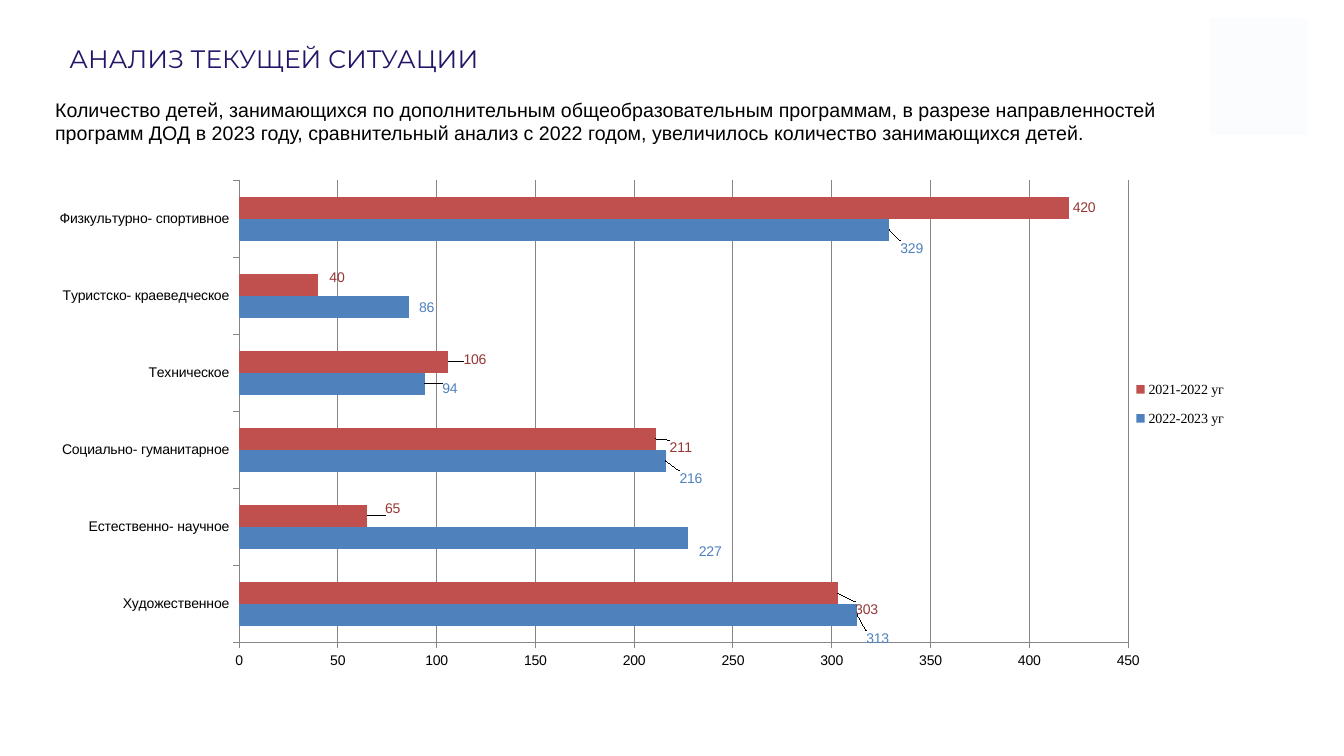
from lxml import etree
from pptx import Presentation
from pptx.chart.data import CategoryChartData
from pptx.dml.color import RGBColor
from pptx.enum.chart import XL_CHART_TYPE as ChartType
from pptx.enum.chart import XL_LABEL_POSITION as LabelPos
from pptx.enum.chart import XL_LEGEND_POSITION as LegendPos
from pptx.enum.chart import XL_TICK_MARK as TickMark
from pptx.enum.shapes import MSO_SHAPE as Shape
from pptx.enum.text import MSO_ANCHOR as Anchor
from pptx.enum.text import MSO_AUTO_SIZE as AutoSize
from pptx.enum.text import PP_ALIGN as Align
from pptx.oxml.ns import qn
from pptx.util import Cm, Pt

COLORS = {
    "title": "221668",
    "text": "000000",
    "plate": "FBFCFE",
    "plate_line": "FBFCFF",
    "grid": "868686",
    "current": "4F81BD",
    "previous": "C0504D",
    "previous_label": "953735",
}

DIRECTIONS = [
    "Художественное",
    "Естественно- научное",
    "Социально- гуманитарное",
    "Техническое",
    "Туристско- краеведческое",
    "Физкультурно- спортивное",
]

# Label shifts are (x, y) in percent of the chart's width and height.
YEARS = [
    {
        "name": "2022-2023 уг",
        "children": [313, 227, 216, 94, 86, 329],
        "fill": "current",
        "label": "current",
        "shifts": [(0.4, 4.7), (0.6, 2.8), (0.8, 3.5), (1.1, 1), (0.5, 0.2), (0.6, 3.7)],
    },
    {
        "name": "2021-2022 уг",
        "children": [303, 65, 211, 106, 40, 420],
        "fill": "previous",
        "label": "previous_label",
        "shifts": [(1.1, 3.3), (1.1, -1.4), (0.8, 1.8), (0.9, -0.4), (0.6, -1.4)],
    },
]


def color(name):
    return RGBColor.from_string(COLORS[name])


def set_layout(parent, index, **settings):
    """Give a chart part a manual layout, as its child number index."""
    for old in parent.findall(qn("c:layout")):
        parent.remove(old)
    layout = etree.Element(qn("c:layout"))
    manual = etree.SubElement(layout, qn("c:manualLayout"))
    for tag, value in settings.items():
        etree.SubElement(manual, qn(f"c:{tag}")).set("val", str(value))
    parent.insert(index, layout)


class SlideBuilder:
    font = "Arial"
    title_font = "Montserrat"
    legend_font = "Times New Roman"

    def __init__(self, deck):
        self.slide = deck.slides.add_slide(deck.slide_layouts[5])

    def style(self, font, name, size, color_name):
        font.name, font.size = name, Pt(size)
        font.color.rgb = color(color_name)

    def title(self, text, left, top, width, height):
        heading = self.slide.shapes.title
        heading.left, heading.top = Cm(left), Cm(top)
        heading.width, heading.height = Cm(width), Cm(height)
        frame = heading.text_frame
        frame.auto_size = AutoSize.NONE
        frame.vertical_anchor = Anchor.MIDDLE
        frame.margin_left = frame.margin_right = Cm(0.33)
        frame.margin_top = frame.margin_bottom = Cm(0.18)
        paragraph = frame.paragraphs[0]
        paragraph.alignment = Align.LEFT
        run = paragraph.add_run()
        run.text = text
        self.style(run.font, self.title_font, 18, "title")

    def plate(self, left, top, width, height):
        plate = self.slide.shapes.add_shape(
            Shape.RECTANGLE, Cm(left), Cm(top), Cm(width), Cm(height))
        plate.shadow.inherit = False
        plate.fill.solid()
        plate.fill.fore_color.rgb = color("plate")
        plate.line.color.rgb = color("plate_line")
        plate.line.width = Pt(2)

    def text(self, text, left, top, width, height):
        box = self.slide.shapes.add_textbox(Cm(left), Cm(top), Cm(width), Cm(height))
        frame = box.text_frame
        frame.word_wrap = True
        frame.auto_size = AutoSize.SHAPE_TO_FIT_TEXT
        run = frame.paragraphs[0].add_run()
        run.text = text
        self.style(run.font, self.font, 14, "text")

    def bar_chart(self, categories, years, left, top, width, height):
        data = CategoryChartData()
        data.categories = categories
        for year in years:
            data.add_series(year["name"], year["children"])
        chart = self.slide.shapes.add_chart(
            ChartType.BAR_CLUSTERED, Cm(left), Cm(top), Cm(width), Cm(height), data).chart
        chart.has_title = False
        self.style(chart.font, self.font, 10, "text")

        plot = chart.plots[0]
        plot.vary_by_categories = False
        plot.gap_width, plot.overlap = 150, 0
        for series, year in zip(plot.series, years):
            self.series(series, year)
        self.axes(chart)
        set_layout(chart.element.find(f".//{qn('c:plotArea')}"), 0,
                   layoutTarget="inner", xMode="edge", yMode="edge",
                   x=0.165, y=0.02, w=0.72, h=0.91)
        self.legend(chart)

    def series(self, series, year):
        series.format.fill.solid()
        series.format.fill.fore_color.rgb = color(year["fill"])
        labels = series.data_labels
        labels.show_value = True
        labels.position = LabelPos.OUTSIDE_END
        self.style(labels.font, self.font, 10, year["label"])
        for index, (right, down) in enumerate(year["shifts"]):
            label = series.points[index].data_label
            self.style(label.font, self.font, 10, year["label"])
            label.position = LabelPos.OUTSIDE_END
        for element, (right, down) in zip(labels._element.findall(qn("c:dLbl")), year["shifts"]):
            set_layout(element, 1, x=right / 100, y=down / 100)

    def axes(self, chart):
        for axis in (chart.category_axis, chart.value_axis):
            axis.major_tick_mark = TickMark.OUTSIDE
            axis.minor_tick_mark = TickMark.NONE
            axis.format.line.color.rgb = color("grid")
        values = chart.value_axis
        values.minimum_scale, values.maximum_scale = 0, 450
        values.major_unit = 50
        values.has_major_gridlines = True
        values.major_gridlines.format.line.color.rgb = color("grid")

    def legend(self, chart):
        chart.has_legend = True
        legend = chart.legend
        legend.position = LegendPos.RIGHT
        legend.include_in_layout = False
        self.style(legend.font, self.legend_font, 10, "text")
        set_layout(legend._element, 1, xMode="edge", yMode="edge",
                   x=0.877, y=0.39, w=0.1, h=0.14)


def main():
    deck = Presentation()
    deck.slide_width, deck.slide_height = Cm(33.87), Cm(19.05)
    builder = SlideBuilder(deck)
    builder.title("АНАЛИЗ ТЕКУЩЕЙ СИТУАЦИИ", 1.42, 0.71, 25.17, 1.5)
    builder.plate(30.53, 0.48, 2.39, 2.9)
    builder.text(
        "Количество детей, занимающихся по дополнительным общеобразовательным "
        "программам, в разрезе направленностей программ ДОД в 2023 году, "
        "сравнительный анализ с 2022 годом, увеличилось количество "
        "занимающихся детей.", 1.14, 2.34, 30.58, 1.45)
    builder.bar_chart(DIRECTIONS, YEARS, 0.89, 4.29, 31.12, 12.8)
    deck.save("out.pptx")


if __name__ == "__main__":
    main()
